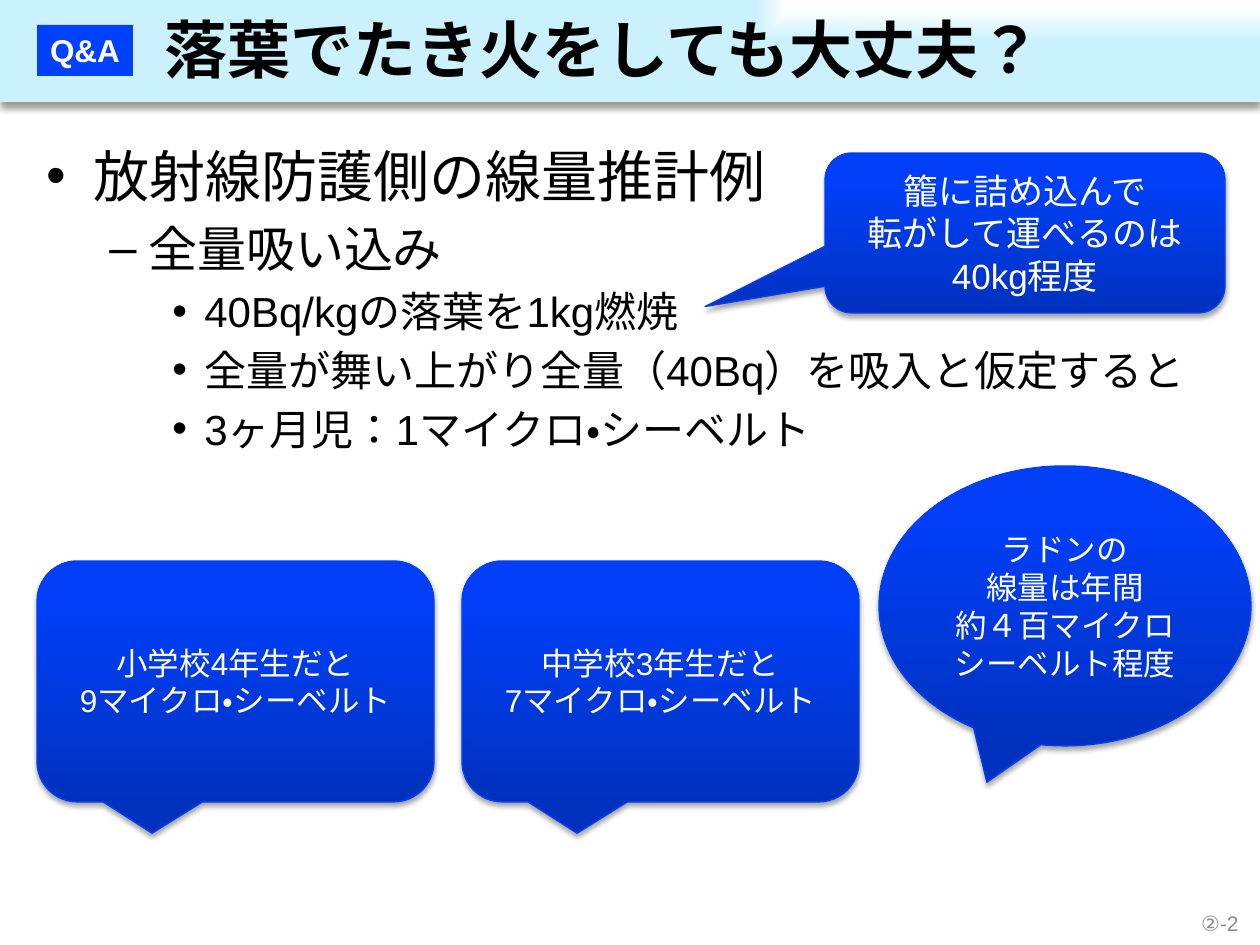
from dataclasses import dataclass

import lxml.etree
import pptx
import pptx.dml.color
import pptx.enum.lang
import pptx.enum.shapes
import pptx.enum.text
import pptx.oxml.ns
import pptx.util

EMU_PER_PX = 914400 / 126
FONT = "Arial"
COLORS = {
    "ink": "000000",
    "paper": "FFFFFF",
    "sky": "CAF1FC",
    "badge": "0041FF",
    "deep": "0031BE",
    "blue": "003FF7",
    "bright": "003FF8",
    "edge": "0040F9",
    "muted": "8C8C8C",
}
SHAPES = pptx.enum.shapes.MSO_SHAPE
ALIGN = pptx.enum.text.PP_ALIGN
ANCHOR = pptx.enum.text.MSO_ANCHOR


@dataclass(frozen=True)
class Box:
    left: int
    top: int
    width: int
    height: int

    def emu(self) -> tuple[int, ...]:
        return tuple(px(n) for n in (self.left, self.top, self.width, self.height))


@dataclass(frozen=True)
class Level:
    indent: int
    hanging: int
    bullet: str
    size: int


@dataclass(frozen=True)
class Callout:
    box: Box
    preset: SHAPES
    size: int
    lines: tuple[str, ...]
    pointer: tuple[float, float] = (-0.21, 0.63)


LEVELS = (Level(47, 47, "•", 32), Level(102, 39, "–", 28), Level(158, 32, "•", 24))
ESTIMATE = (
    (0, "放射線防護側の線量推計例"),
    (1, "全量吸い込み"),
    (2, "40Bq/kgの落葉を1kg燃焼"),
    (2, "全量が舞い上がり全量（40Bq）を吸入と仮定すると"),
    (2, "3ヶ月児：1マイクロ・シーベルト"),
)
ROUNDED = SHAPES.ROUNDED_RECTANGULAR_CALLOUT
CALLOUTS = (
    Callout(Box(825, 153, 400, 160), ROUNDED, 20,
            ("籠に詰め込んで", "転がして運べるのは40kg程度"), (-0.8, 0.46)),
    *(Callout(Box(37 + 425 * column, 561, 397, 241), ROUNDED, 18, lines)
      for column, lines in enumerate((
          ("小学校4年生だと", "9マイクロ・シーベルト"),
          ("中学校3年生だと", "7マイクロ・シーベルト"),
      ))),
    Callout(Box(879, 466, 372, 280), SHAPES.OVAL_CALLOUT, 18,
            ("ラドンの", "線量は年間", "約４百マイクロ", "シーベルト程度")),
)


def px(length: int) -> int:
    return round(length * EMU_PER_PX)


def rgb(color: str) -> pptx.dml.color.RGBColor:
    return pptx.dml.color.RGBColor.from_string(COLORS[color])


def add_child(parent, tag: str, **attributes):
    child = lxml.etree.SubElement(parent, pptx.oxml.ns.qn(f"a:{tag}"))
    for key, setting in attributes.items():
        child.set(key, str(setting))
    return child


def add_gradient(shape, stops: tuple[tuple[int, str], ...]):
    gradient = add_child(shape._element.spPr, "gradFill", rotWithShape=1)
    stop_list = add_child(gradient, "gsLst")
    for percent, color in stops:
        stop = add_child(stop_list, "gs", pos=percent * 1000)
        add_child(stop, "srgbClr", val=COLORS[color])
    return gradient


def add_drop_shadow(shape, opacity: int, blur: float, distance: float) -> None:
    shape.shadow.inherit = False
    effects = shape._element.spPr.find(pptx.oxml.ns.qn("a:effectLst"))
    shadow = add_child(effects, "outerShdw", blurRad=pptx.util.Pt(blur),
                       dist=pptx.util.Pt(distance), dir=5400000, rotWithShape=0)
    color = add_child(shadow, "srgbClr", val=COLORS["ink"])
    add_child(color, "alpha", val=opacity * 1000)


def add_run(paragraph, text: str, size: int, color: str, bold: bool = False) -> None:
    run = paragraph.add_run()
    run.text = text
    run.font.name = FONT
    run.font.size = pptx.util.Pt(size)
    run.font.bold = bold
    run.font.color.rgb = rgb(color)
    run.font.language_id = pptx.enum.lang.MSO_LANGUAGE_ID.JAPANESE


def paragraph_at(frame, index: int):
    return frame.add_paragraph() if index else frame.paragraphs[0]


def fit_to_text(frame) -> None:
    frame.word_wrap = False
    frame.auto_size = pptx.enum.text.MSO_AUTO_SIZE.SHAPE_TO_FIT_TEXT


def add_header(slide) -> None:
    band = slide.shapes.add_shape(SHAPES.RECTANGLE, *Box(0, 0, 1260, 102).emu())
    gradient = add_gradient(band, ((20, "paper"), (80, "sky")))
    path = add_child(gradient, "path", path="rect")
    add_child(path, "fillToRect", l=100000, b=100000)
    band.line.fill.background()
    add_drop_shadow(band, 40, 4, 3)


def add_badge(slide) -> None:
    badge = slide.shapes.add_shape(SHAPES.RECTANGLE, *Box(37, 25, 96, 51).emu())
    badge.shadow.inherit = False
    badge.fill.solid()
    badge.fill.fore_color.rgb = rgb("badge")
    badge.line.fill.background()
    frame = badge.text_frame
    fit_to_text(frame)
    frame.vertical_anchor = ANCHOR.TOP
    frame.paragraphs[0].alignment = ALIGN.CENTER
    add_run(frame.paragraphs[0], "Q&A", 18, "paper", bold=True)


def add_title(slide) -> None:
    frame = slide.shapes.add_textbox(*Box(152, 4, 916, 89).emu()).text_frame
    fit_to_text(frame)
    add_run(frame.paragraphs[0], "落葉でたき火をしても大丈夫？", 36, "ink", bold=True)


def add_estimate(slide) -> None:
    frame = slide.shapes.add_textbox(*Box(34, 135, 1191, 764).emu()).text_frame
    frame.word_wrap = True
    for index, (depth, text) in enumerate(ESTIMATE):
        level = LEVELS[depth]
        paragraph = paragraph_at(frame, index)
        paragraph.level = depth
        properties = paragraph._p.get_or_add_pPr()
        properties.set("marL", str(px(level.indent)))
        properties.set("indent", str(-px(level.hanging)))
        add_child(add_child(properties, "spcBef"), "spcPct", val=20000)
        add_child(properties, "buFont", typeface=FONT)
        add_child(properties, "buChar", char=level.bullet)
        add_run(paragraph, text, level.size, "ink")


def add_page_number(slide) -> None:
    frame = slide.shapes.add_textbox(*Box(958, 910, 293, 26).emu()).text_frame
    frame.word_wrap = True
    frame.vertical_anchor = ANCHOR.MIDDLE
    frame.paragraphs[0].alignment = ALIGN.RIGHT
    add_run(frame.paragraphs[0], "②-2", 12, "muted")


def add_callout(slide, callout: Callout) -> None:
    bubble = slide.shapes.add_shape(callout.preset, *callout.box.emu())
    bubble.adjustments[0], bubble.adjustments[1] = callout.pointer
    gradient = add_gradient(bubble, ((0, "deep"), (80, "blue"), (100, "bright")))
    add_child(gradient, "lin", ang=16200000, scaled=0)
    bubble.line.color.rgb = rgb("edge")
    bubble.line.width = pptx.util.Pt(0.75)
    add_drop_shadow(bubble, 35, 3.1, 1.8)
    frame = bubble.text_frame
    frame.word_wrap = True
    frame.vertical_anchor = ANCHOR.MIDDLE
    for index, line in enumerate(callout.lines):
        paragraph = paragraph_at(frame, index)
        paragraph.alignment = ALIGN.CENTER
        add_run(paragraph, line, callout.size, "paper")


def main() -> None:
    deck = pptx.Presentation()
    deck.slide_width, deck.slide_height = px(1260), px(945)
    slide = deck.slides.add_slide(deck.slide_layouts[6])
    for add_part in (add_header, add_estimate, add_page_number, add_badge, add_title):
        add_part(slide)
    for callout in CALLOUTS:
        add_callout(slide, callout)
    deck.save("out.pptx")


if __name__ == "__main__":
    main()
